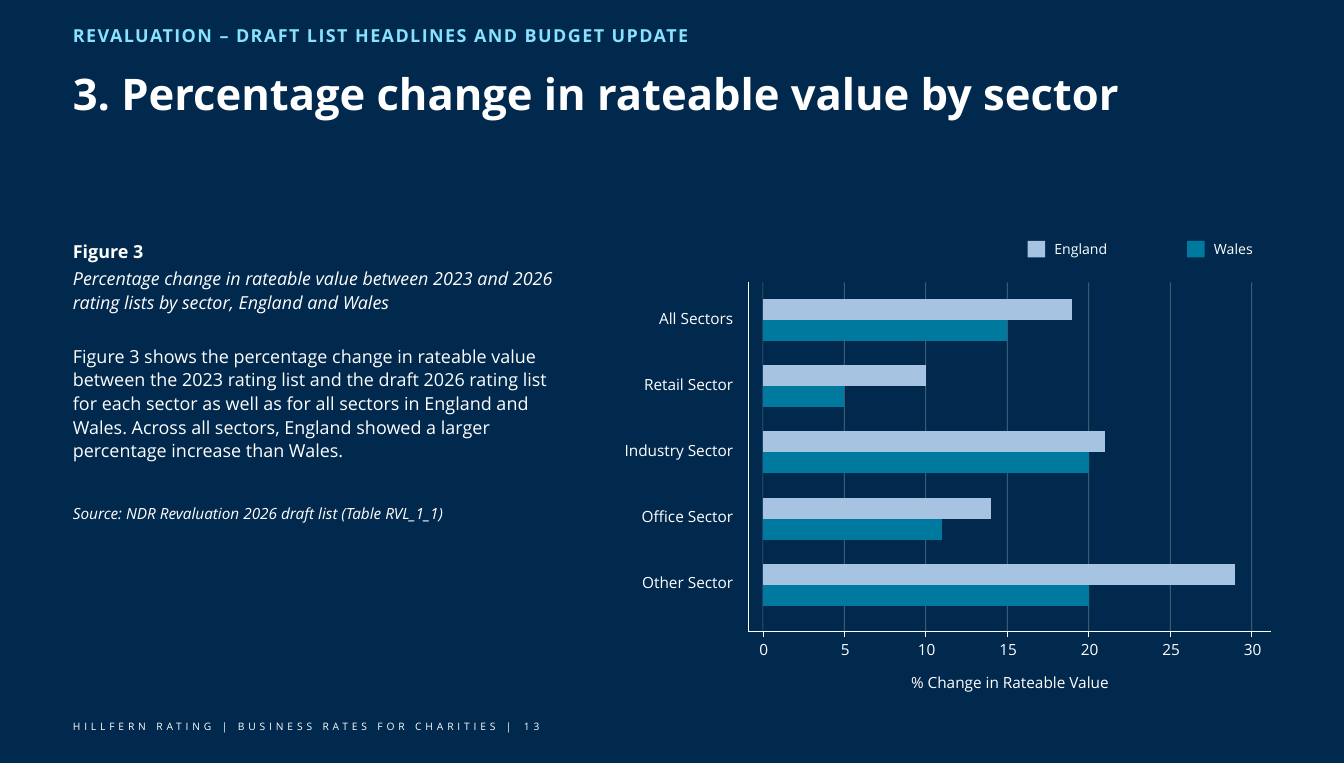
from lxml import etree
from pptx import Presentation
from pptx.chart.data import CategoryChartData
from pptx.dml.color import RGBColor
from pptx.enum.chart import XL_CHART_TYPE
from pptx.enum.shapes import MSO_CONNECTOR, MSO_SHAPE
from pptx.enum.text import MSO_ANCHOR, MSO_AUTO_SIZE, PP_ALIGN
from pptx.oxml import parse_xml
from pptx.oxml.ns import nsdecls, qn
from pptx.util import Inches, Pt

BAR_CLUSTERED = XL_CHART_TYPE.BAR_CLUSTERED
STRAIGHT = MSO_CONNECTOR.STRAIGHT
RECTANGLE = MSO_SHAPE.RECTANGLE
TOP, MIDDLE = MSO_ANCHOR.TOP, MSO_ANCHOR.MIDDLE
NO_AUTOFIT = MSO_AUTO_SIZE.NONE
LEFT, CENTER, RIGHT = PP_ALIGN.LEFT, PP_ALIGN.CENTER, PP_ALIGN.RIGHT

NAVY = RGBColor(0x00, 0x29, 0x4D)
WHITE = RGBColor(0xFF, 0xFF, 0xFF)
SKY = RGBColor(0x88, 0xE2, 0xFF)
PALE_BLUE = RGBColor(0xA6, 0xC4, 0xE2)
TEAL = RGBColor(0x00, 0x79, 0x9F)

FONT = "Open Sans"
MARGIN = 0.79
AXIS_LEFT, AXIS_RIGHT = 8.11, 13.78
AXIS_TOP, AXIS_BOTTOM = 3.06, 6.84
ZERO, SCALE_WIDTH = 8.27, 5.3
BARS_TOP, BARS_HEIGHT = 3.11, 3.59
SCALE_MAX, SCALE_STEP = 30, 5

SECTORS = ["All Sectors", "Retail Sector", "Industry Sector",
           "Office Sector", "Other Sector"]
NATIONS = [
    ("England", PALE_BLUE, 11.14, [19, 10, 21, 14, 29]),
    ("Wales", TEAL, 12.87, [15, 5, 20, 11, 20]),
]


def write_paragraph(paragraph, text, size, color=WHITE, align=LEFT,
                    spacing=1.0, after=0, tracking=0, **style):
    run = paragraph.add_run()
    run.text = text
    layout = {"alignment": align, "line_spacing": spacing,
              "space_before": Pt(0), "space_after": Pt(after)}
    for key, value in layout.items():
        setattr(paragraph, key, value)
    for key, value in {"name": FONT, "size": Pt(size), **style}.items():
        setattr(run.font, key, value)
    run.font.color.rgb = color
    if tracking:
        run.font._element.set("spc", str(round(tracking * 100)))


def format_frame(frame, anchor=TOP):
    values = {"margin_left": 0, "margin_top": 0, "margin_right": 0,
              "margin_bottom": 0, "word_wrap": True,
              "auto_size": NO_AUTOFIT, "vertical_anchor": anchor}
    for key, value in values.items():
        setattr(frame, key, value)


def add_text(slide, box, text, size, anchor=TOP, **style):
    frame = slide.shapes.add_textbox(*map(Inches, box)).text_frame
    format_frame(frame, anchor)
    write_paragraph(frame.paragraphs[0], text, size, **style)
    return frame


def add_title(slide, text):
    title = slide.shapes.title
    box = {"left": MARGIN, "top": 0.79, "width": 12.99, "height": 0.55}
    for key, value in box.items():
        setattr(title, key, Inches(value))
    format_frame(title.text_frame)
    write_paragraph(title.text_frame.paragraphs[0], text, 34,
                    spacing=0.9, after=7.5, bold=True)


def add_rule(slide, x1, y1, x2, y2, opacity=100):
    rule = slide.shapes.add_connector(STRAIGHT, *map(Inches, (x1, y1, x2, y2)))
    rule.line.color.rgb = WHITE
    rule.line.width = Pt(0.5)
    properties = rule._element.spPr
    if opacity < 100:
        color = properties.find(".//" + qn("a:srgbClr"))
        etree.SubElement(color, qn("a:alpha"), val=str(opacity * 1000))
    etree.SubElement(properties, qn("a:effectLst"))


def add_legend_entry(slide, nation, color, left):
    swatch = slide.shapes.add_shape(
        RECTANGLE, *map(Inches, (left, 2.61, 0.19, 0.18)))
    swatch.shadow.inherit = False
    swatch.fill.solid()
    swatch.fill.fore_color.rgb = color
    swatch.line.fill.background()
    add_text(slide, (left + 0.29, 2.54, 0.87, 0.32), nation, 11, MIDDLE)


def add_scale(slide):
    steps = SCALE_MAX // SCALE_STEP
    for step in range(steps + 1):
        x = ZERO + SCALE_WIDTH * step / steps
        add_rule(slide, x, AXIS_BOTTOM, x, AXIS_TOP, opacity=34)
        add_rule(slide, x, 6.9, x, AXIS_BOTTOM)
        add_text(slide, (x - 0.16, 6.85, 0.34, 0.37), str(step * SCALE_STEP),
                 12, MIDDLE, align=CENTER)
    add_rule(slide, AXIS_LEFT, AXIS_TOP, AXIS_LEFT, AXIS_BOTTOM)
    add_rule(slide, AXIS_LEFT, AXIS_BOTTOM, AXIS_RIGHT, AXIS_BOTTOM)
    add_text(slide, (8.11, 7.21, 5.68, 0.37), "% Change in Rateable Value",
             12, MIDDLE, align=CENTER)


def add_sector_labels(slide):
    pitch = BARS_HEIGHT / len(SECTORS)
    for row, sector in enumerate(SECTORS):
        add_text(slide, (6.5, 3.25 + row * pitch, 1.45, 0.39), sector,
                 12, MIDDLE, align=RIGHT)


def add_sector_bars(slide):
    data = CategoryChartData(number_format="0")
    data.categories = SECTORS
    for nation, _, _, changes in NATIONS:
        data.add_series(nation, changes)
    box = map(Inches, (ZERO, BARS_TOP, SCALE_WIDTH, BARS_HEIGHT))
    chart = slide.shapes.add_chart(BAR_CLUSTERED, *box, data).chart
    chart.has_legend = False
    chart.has_title = False
    chart.font.name = FONT
    chart.font.size = Pt(12)
    chart.font.color.rgb = WHITE
    chart.category_axis.reverse_order = True
    chart.category_axis.visible = False
    scale = {"minimum_scale": 0, "maximum_scale": SCALE_MAX,
             "major_unit": SCALE_STEP, "has_major_gridlines": False,
             "visible": False}
    for key, value in scale.items():
        setattr(chart.value_axis, key, value)
    plot = chart.plots[0]
    for key, value in {"gap_width": 116, "overlap": 0,
                       "vary_by_categories": False}.items():
        setattr(plot, key, value)
    for series, (_, color, _, _) in zip(plot.series, NATIONS):
        series.format.fill.solid()
        series.format.fill.fore_color.rgb = color
    fill_frame(chart)


def fill_frame(chart):
    plot_area = chart._chartSpace.chart.plotArea
    for layout in plot_area.findall(qn("c:layout")):
        plot_area.remove(layout)
    plot_area.insert(0, parse_xml(
        f'<c:layout {nsdecls("c")}><c:manualLayout>'
        '<c:layoutTarget val="inner"/><c:xMode val="edge"/>'
        '<c:yMode val="edge"/><c:x val="0"/><c:y val="0"/>'
        '<c:w val="1"/><c:h val="1"/></c:manualLayout></c:layout>'))
    chart._chartSpace.chart.addnext(parse_xml(
        f'<c:spPr {nsdecls("c", "a")}><a:noFill/>'
        '<a:ln><a:noFill/></a:ln></c:spPr>'))


def add_commentary(slide):
    caption = add_text(slide, (MARGIN, 2.58, 5.54, 0.6), "Figure 3", 14,
                       spacing=1.1, after=3, bold=True)
    write_paragraph(
        caption.add_paragraph(),
        "Percentage change in rateable value between 2023 and 2026 "
        "rating lists by sector, England and Wales",
        14, spacing=1.1, after=12, italic=True)
    add_text(
        slide, (MARGIN, 3.72, 5.3, 1.5),
        "Figure 3 shows the percentage change in rateable value between the "
        "2023 rating list and the draft 2026 rating list for each sector as "
        "well as for all sectors in England and Wales. Across all sectors, "
        "England showed a larger percentage increase than Wales.",
        14, spacing=1.1, after=12)
    add_text(slide, (MARGIN, 5.44, 5.36, 0.26),
             "Source: NDR Revaluation 2026 draft list (Table RVL_1_1)",
             12, spacing=1.1, after=12, italic=True)


def main():
    deck = Presentation()
    deck.slide_width, deck.slide_height = Inches(14.57), Inches(8.27)
    slide = deck.slides.add_slide(deck.slide_layouts[5])
    slide.background.fill.solid()
    slide.background.fill.fore_color.rgb = NAVY

    add_text(slide, (MARGIN, 0.24, 12.99, 0.34),
             "REVALUATION – DRAFT LIST HEADLINES AND BUDGET UPDATE", 14,
             color=SKY, spacing=1.1, after=3, tracking=1.1, bold=True)
    add_title(slide, "3. Percentage change in rateable value by sector")
    add_commentary(slide)
    for nation, color, left, _ in NATIONS:
        add_legend_entry(slide, nation, color, left)
    add_scale(slide)
    add_sector_labels(slide)
    add_sector_bars(slide)
    add_text(slide, (MARGIN, 7.81, 4.87, 0.23),
             "HILLFERN RATING | BUSINESS RATES FOR CHARITIES |", 8, tracking=3)
    add_text(slide, (5.68, 7.81, 0.32, 0.23), "13", 8, tracking=3)
    deck.save("out.pptx")


if __name__ == "__main__":
    main()
